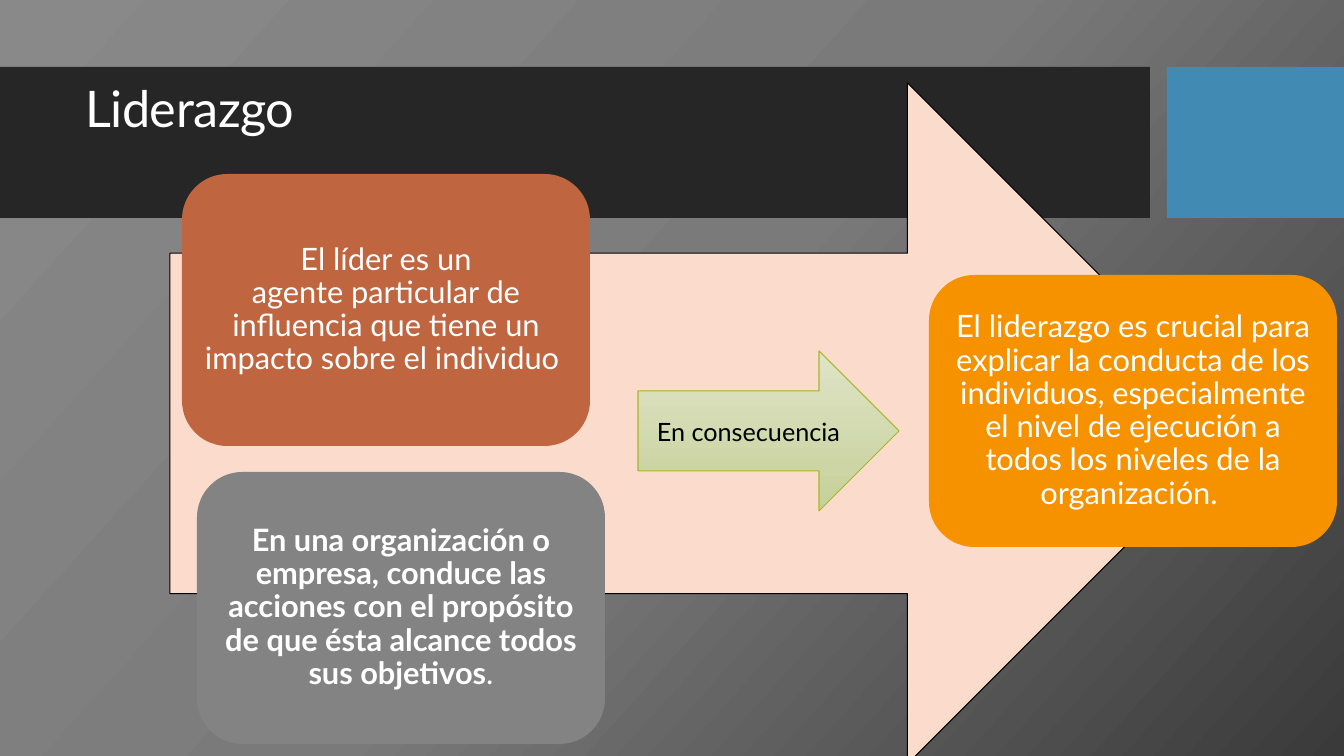
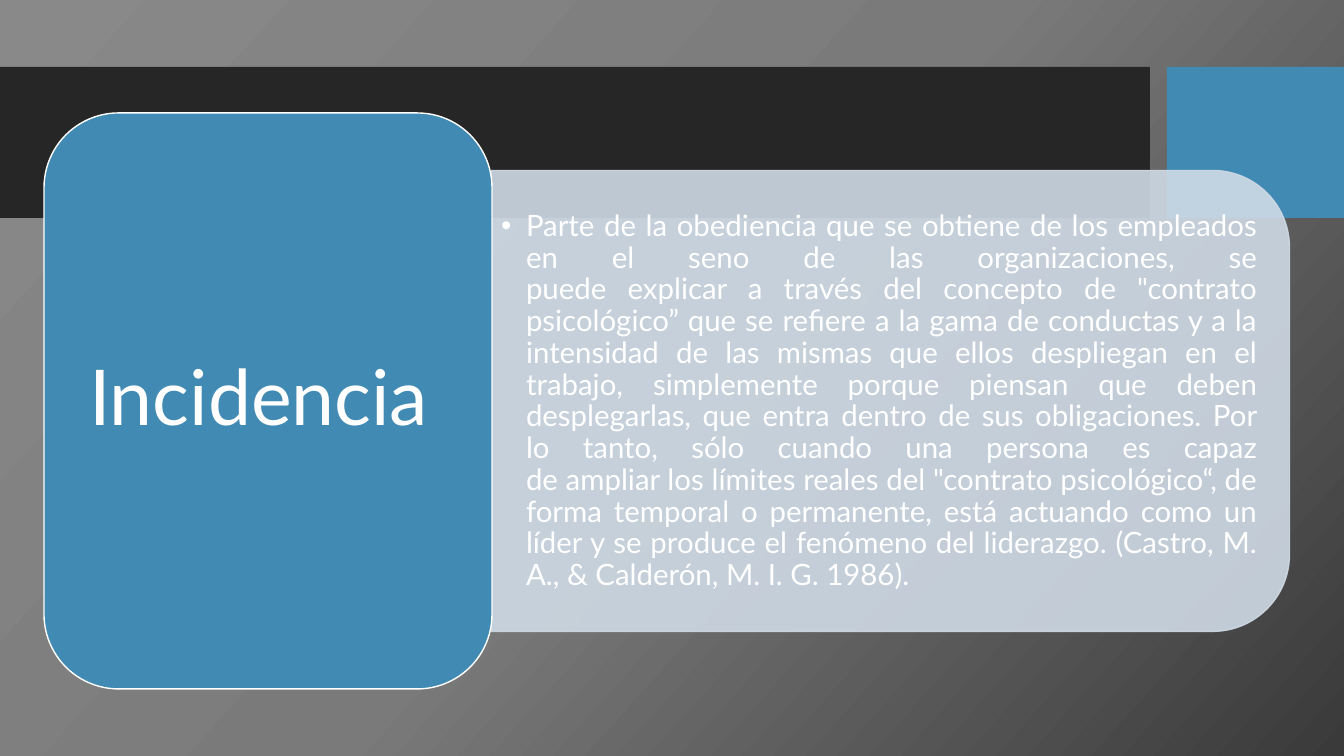
from copy import deepcopy
from dataclasses import dataclass

from lxml.etree import SubElement
from pptx import Presentation
from pptx.dml.color import RGBColor
from pptx.enum.shapes import MSO_SHAPE as Preset
from pptx.enum.text import MSO_ANCHOR as Anchor, MSO_AUTO_SIZE as AutoSize, PP_ALIGN as Align
from pptx.oxml.ns import qn
from pptx.util import Emu, Pt


@dataclass(frozen=True)
class Theme:
    font: str = "Lato"
    white: str = "FFFFFF"
    black: str = "000000"
    band: str = "262626"
    accent: str = "418AB3"
    peach: str = "FBDCCC"
    orange: str = "F69200"
    rust: str = "BF6540"
    gray: str = "838383"
    panel: str = "CFDAE5"
    lime: str = "A6B727"
    lime_fade: tuple = ((0, "DFE4C7"), (1, "C6D099"))
    backdrop: tuple = ((0, "898989"), (0.5, "7A7A7A"), (1, "3A3A3A"))
    title_size: int = 36
    card_size: int = 22
    body_size: int = 21
    label_size: int = 18
    headline_size: int = 55


THEME = Theme()
SLIDE_SIZE = (1344, 756)
CARD_SIZE = (408, 272)
EMU_PER_PX = 12192000 / 1344

LEADER = "El líder es un\nagente particular de influencia que tiene un impacto sobre el individuo "
GOAL = ("En una organización o empresa, conduce las acciones con el propósito "
        "de que ésta alcance todos sus objetivos")
CONSEQUENCE = ("El liderazgo es crucial para explicar la conducta de los individuos, "
               "especialmente el nivel de ejecución a todos los niveles de la organización. ")
CONTRACT = (
    "Parte de la obediencia que se obtiene de los empleados en el seno de las organizaciones, se\n"
    "puede explicar a través del concepto de \"contrato psicológico” que se refiere a la gama de "
    "conductas y a la intensidad de las mismas que ellos despliegan en el trabajo, simplemente "
    "porque piensan que deben desplegarlas, que entra dentro de sus obligaciones. Por lo tanto, "
    "sólo cuando una persona es capaz\n"
    "de ampliar los límites reales del \"contrato psicológico“, de forma temporal o permanente, "
    "está actuando como un líder y se produce el fenómeno del liderazgo. "
    "(Castro, M. A., & Calderón, M. I. G. 1986). ")


def px(length):
    return Emu(round(length * EMU_PER_PX))


def rgb(color):
    return RGBColor.from_string(color)


def apply_gradient(fill, owner, stops, angle):
    fill.gradient()
    fill.gradient_angle = angle
    stop_list = next(owner.iter(qn("a:gsLst")))
    while len(stop_list) < len(stops):
        stop_list.append(deepcopy(stop_list[-1]))
    for stop, (position, color) in zip(fill.gradient_stops, stops):
        stop.position = position
        stop.color.rgb = rgb(color)


def add_preset(slide, preset, box, fill=None, line=None, line_width=0.75, opacity=100):
    shape = slide.shapes.add_shape(preset, *map(px, box))
    shape.shadow.inherit = False
    if fill:
        shape.fill.solid()
        shape.fill.fore_color.rgb = rgb(fill)
    if line:
        shape.line.color.rgb = rgb(line)
        shape.line.width = Pt(line_width)
    else:
        shape.line.fill.background()
    if opacity < 100:
        for color in shape.element.spPr.iter(qn("a:srgbClr")):
            SubElement(color, qn("a:alpha"), val=str(opacity * 1000))
    return shape


def write(shape, text, size, color=THEME.white, align=Align.CENTER, bold=False, plain_end="",
          margins=(10, 5), line_spacing=0.9, tracking=0, bullet_indent=0):
    frame = shape.text_frame
    frame.word_wrap = True
    frame.auto_size = AutoSize.NONE
    frame.vertical_anchor = Anchor.MIDDLE
    frame.margin_left = frame.margin_right = px(margins[0])
    frame.margin_top = frame.margin_bottom = px(margins[1])
    paragraph = frame.paragraphs[0]
    paragraph.text = text
    if bullet_indent:
        properties = paragraph._p.get_or_add_pPr()
        properties.set("marL", str(px(bullet_indent)))
        properties.set("indent", str(-px(bullet_indent)))
        SubElement(properties, qn("a:buChar"), char="•")
    paragraph.alignment = align
    paragraph.line_spacing = line_spacing
    paragraph.space_before = Pt(0)
    for run in paragraph.runs:
        run.font.bold = bold
    if plain_end:
        paragraph.add_run().text = plain_end
    for run in paragraph.runs:
        run.font.name = THEME.font
        run.font.size = Pt(size)
        run.font.color.rgb = rgb(color)
        if tracking:
            run._r.get_or_add_rPr().set("spc", str(tracking))


def place(placeholder, box):
    placeholder.left, placeholder.top, placeholder.width, placeholder.height = map(px, box)


def bring_to_front(slide, placeholder):
    slide.shapes.element.append(placeholder.element)


def add_card(slide, position, color, text, **text_format):
    card = add_preset(slide, Preset.ROUNDED_RECTANGLE, (*position, *CARD_SIZE), color)
    write(card, text, THEME.card_size, margins=(9, 9), **text_format)


def style_master(master, slide):
    apply_gradient(master.background.fill, master.element, THEME.backdrop, 318)
    tree = master.shapes.element
    for index, (left, width, color) in enumerate(((0, 1150, THEME.band), (1167, 177, THEME.accent))):
        band = add_preset(slide, Preset.RECTANGLE, (left, 67, width, 151), color).element
        band.nvSpPr.cNvPr.set("id", str(len(tree) + 1))
        tree.insert(2 + index, band)


def build_leadership(slide):
    title = slide.shapes.title
    place(title, (75, 52, 1059, 119))
    write(title, "Liderazgo", THEME.title_size, align=Align.LEFT, tracking=-30)
    add_preset(slide, Preset.RIGHT_ARROW, (170, 83, 1078, 681), THEME.peach, THEME.black)
    add_card(slide, (929, 275), THEME.orange, CONSEQUENCE)
    add_card(slide, (182, 174), THEME.rust, LEADER)
    add_card(slide, (197, 472), THEME.gray, GOAL, bold=True, plain_end=".")
    link = add_preset(slide, Preset.RIGHT_ARROW, (638, 351, 261, 160), line=THEME.lime)
    apply_gradient(link.fill, link.element, THEME.lime_fade, 270)
    write(link, "En consecuencia", THEME.label_size, THEME.black, line_spacing=1)


def build_incidence(slide):
    panel = add_preset(slide, Preset.ROUND_2_SAME_RECTANGLE, (660, 2, 461, 798),
                       THEME.panel, THEME.panel, 1, opacity=90)
    panel.rotation = 90
    explanation = slide.placeholders[1]
    place(explanation, (492, 194, 774, 415))
    write(explanation, CONTRACT, THEME.body_size, align=Align.JUSTIFY,
          margins=(9, 4), bullet_indent=25)
    bring_to_front(slide, explanation)
    add_preset(slide, Preset.ROUNDED_RECTANGLE, (44, 113, 448, 576), THEME.accent, THEME.white, 1)
    headline = slide.shapes.title
    place(headline, (66, 135, 404, 532))
    write(headline, "Incidencia", THEME.headline_size, align=Align.JUSTIFY, margins=(23, 11))
    bring_to_front(slide, headline)


def main():
    deck = Presentation()
    deck.slide_width, deck.slide_height = map(px, SLIDE_SIZE)
    leadership = deck.slides.add_slide(deck.slide_layouts.get_by_name("Title Only"))
    incidence = deck.slides.add_slide(deck.slide_layouts.get_by_name("Title and Content"))
    style_master(deck.slide_master, leadership)
    build_leadership(leadership)
    build_incidence(incidence)
    deck.save("out.pptx")


if __name__ == "__main__":
    main()
